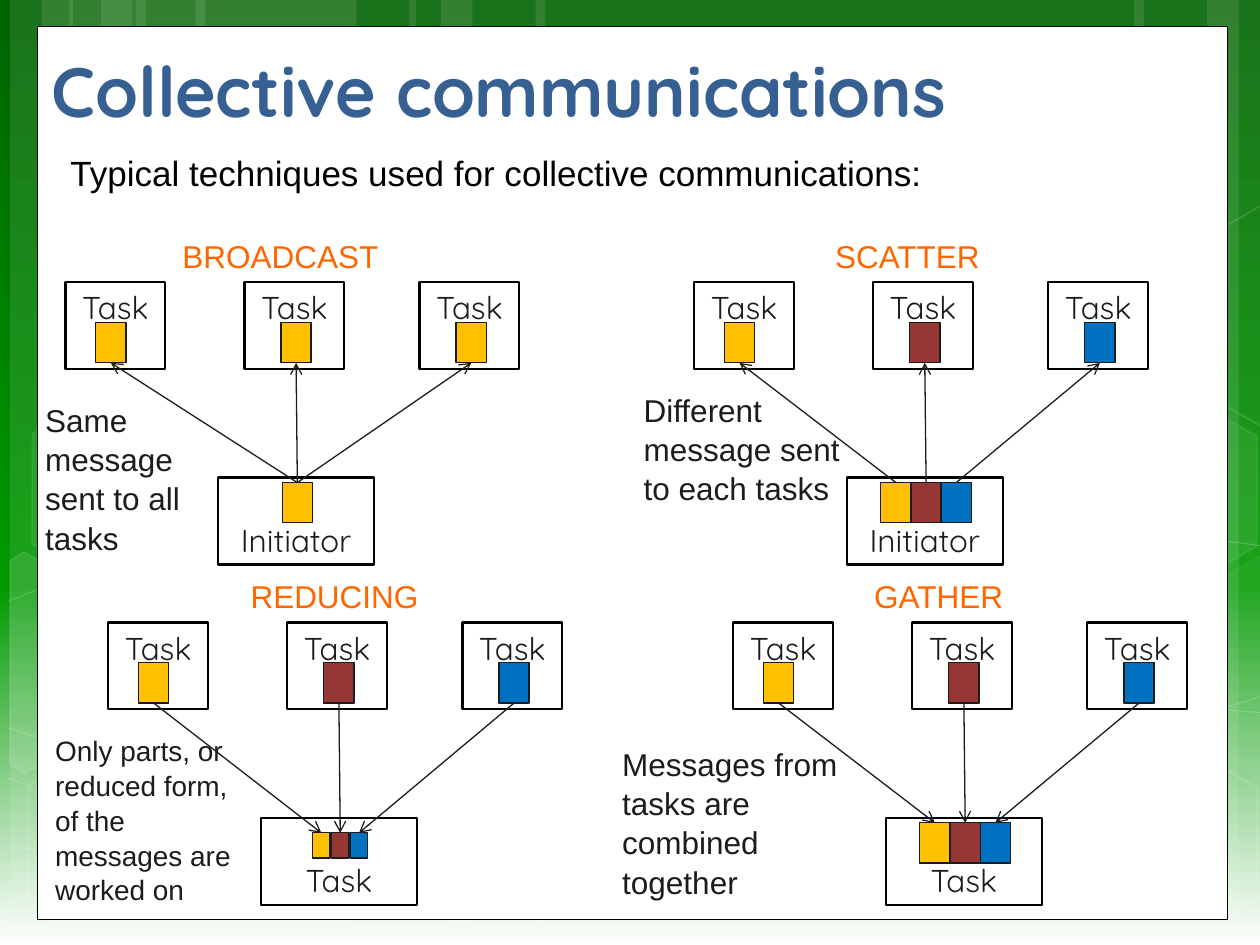
from copy import deepcopy

from lxml.etree import SubElement
from pptx import Presentation
from pptx.dml.color import RGBColor
from pptx.enum.shapes import MSO_CONNECTOR, MSO_SHAPE
from pptx.enum.text import MSO_ANCHOR, PP_ALIGN
from pptx.oxml.ns import qn
from pptx.util import Inches, Pt

INK, BLACK, WHITE = "1C1C1C", "000000", "FFFFFF"
YELLOW, RED, BLUE = "FFC000", "953735", "0070C0"

# Offsets inside one diagram, from the corner of its first task
TASK_LEFTS = (0, 1.42, 2.81)
MESSAGE_LEFTS = (0.24, 1.71, 3.10)
MESSAGE_TOP, MESSAGE_SIZE = 0.32, (0.24, 0.32)
HUB_LEFT, HUB_TOP, HUB_CENTER = 1.21, 1.55, 1.84
FULL_PARCEL = (1.59, 0.24, 0.32, 0.24)  # top, width, height, step
SMALL_PARCEL = (1.67, 0.14, 0.20, 0.15)

# left, width, turn
BANDS = [(1.08, 1.75, 0), (0.08, 0.5, 0), (0.33, 0.83, 0), (1.55, 1.75, 0),
         (0.55, 0.5, 0), (0.8, 0.83, 0), (7.33, 1.75, 180), (9.58, 0.5, 180),
         (9, 0.83, 180), (4.25, 3.08, 0), (3.25, 0.5, 0), (3.5, 0.83, 0)]
WAVES = [
    [(0.07, 6.73), (1.9, 6.78), (4.58, 6.65), (7.92, 6.17), (10.07, 5.51)],
    [(0.07, 4.77), (1.21, 4.31), (3.47, 3.87), (6.54, 3.87), (10.07, 4.34)],
    [(0.06, 6.17), (1.7, 6.88), (3.34, 7.49)],
    [(0.07, 5.78), (1.28, 6.16), (3.57, 6.73), (6.28, 7.18), (8.53, 7.36), (10.07, 7.34)],
    [(2.42, 7.49), (3.02, 6.91), (3.88, 6.39), (4.7, 6.09), (6.08, 5.78),
     (6.8, 5.69), (7.94, 5.62), (9.53, 5.62), (10.06, 5.66)],
]
# left, top, fill opacity, line opacity
HEXAGONS = [(4.97, 5.89, 6, 12), (0.11, 5.91, 0, 12), (0.14, 3.12, 7, 8),
            (1.74, 5.92, 0, 12), (8.34, 5.93, 0, 12), (8.34, 3.14, 7, 8)]
# points, fill opacity
CUT_HEXAGONS = [
    ([(0.08, 4.45), (0.19, 4.38), (0.96, 4.82), (0.95, 5.7), (0.2, 6.14), (0.08, 6.07)], 10),
    ([(9.26, 4.85), (10.01, 4.41), (10.09, 4.46), (10.09, 6.13), (10.02, 6.17), (9.26, 5.73)], 4),
    ([(9.26, 2.07), (10.01, 1.63), (10.1, 1.68), (10.09, 3.35), (10.02, 3.39), (9.26, 2.95)], 0),
]

DIAGRAMS = [
    dict(origin=(0.52, 2.24), heading="BROADCAST", heading_box=(1.35, 1.77),
         note="Same message sent to all tasks", note_box=(0.26, 3.12, 1.46, 1.31),
         hub="Initiator", colors=(YELLOW,) * 3, parcels=(YELLOW,), outward=True),
    dict(origin=(5.51, 2.24), heading="SCATTER", heading_box=(6.53, 1.36),
         note="Different message sent to each tasks", note_box=(5.01, 3.04, 2, 1.01),
         hub="Initiator", outward=True),
    dict(origin=(5.82, 4.94), heading="GATHER", heading_box=(6.84, 1.23),
         note="Messages from tasks are combined together", note_box=(4.84, 5.85, 2, 1.31)),
    dict(origin=(0.86, 4.94), heading="REDUCING", heading_box=(1.89, 1.55),
         note="Only parts, or reduced form, of the messages are worked on",
         note_box=(0.34, 5.76, 1.73, 1.45), note_size=16, parcel=SMALL_PARCEL),
]


def rgb(color):
    return RGBColor.from_string(color)


def set_opacity(fill_format, percent):
    for color in fill_format._xPr.iter(qn("a:srgbClr")):
        SubElement(color, qn("a:alpha"), val=str(percent * 1000))


def paint(shape, fill=None, line=None, width=0.75, fill_opacity=100, line_opacity=100):
    shape.shadow.inherit = False
    for part, color, opacity in ((shape.line.fill, line, line_opacity),
                                 (shape.fill, fill, fill_opacity)):
        if color is None or opacity == 0:
            part.background()
            continue
        part.solid()
        part.fore_color.rgb = rgb(color)
        if opacity < 100:
            set_opacity(part, opacity)
    if line:
        shape.line.width = Pt(width)


def write(shape, text, size, font, color, bold=False, align=PP_ALIGN.LEFT,
          anchor=MSO_ANCHOR.TOP, wrap=True, spacing=None):
    frame = shape.text_frame
    frame.word_wrap = wrap
    frame.vertical_anchor = anchor
    paragraph = frame.paragraphs[0]
    paragraph.alignment = align
    paragraph.line_spacing = spacing
    run = paragraph.add_run()
    run.text = text
    for name, value in dict(size=Pt(size), name=font, bold=bold).items():
        setattr(run.font, name, value)
    run.font.color.rgb = rgb(color)


def add_text(slide, box, text, size, font, color, **style):
    write(slide.shapes.add_textbox(*map(Inches, box)), text, size, font, color, **style)


def add_preset(slide, box, kind=MSO_SHAPE.RECTANGLE, **colors):
    shape = slide.shapes.add_shape(kind, *map(Inches, box))
    paint(shape, **colors)
    return shape


def add_outline(slide, points, closed, **colors):
    places = [(Inches(x), Inches(y)) for x, y in points]
    builder = slide.shapes.build_freeform(*places[0])
    builder.add_line_segments(places[1:], close=closed)
    paint(builder.convert_to_shape(), **colors)


def add_box(slide, box, label, anchor=MSO_ANCHOR.TOP):
    shape = add_preset(slide, box, fill=WHITE, line=BLACK, width=1.25)
    write(shape, label, 18, "Quicksand", INK, align=PP_ALIGN.CENTER, anchor=anchor)


def add_arrow(slide, start, end):
    arrow = slide.shapes.add_connector(MSO_CONNECTOR.STRAIGHT, *map(Inches, start + end))
    arrow.line.color.rgb = rgb(INK)
    arrow.line.width = Pt(0.75)
    SubElement(arrow.line._get_or_add_ln(), qn("a:tailEnd"), type="arrow")
    SubElement(arrow._element.spPr, qn("a:effectLst"))


def add_background(slide):
    fill = slide.background.fill
    fill.gradient()
    fill.gradient_angle = 270
    stop_list = fill.gradient_stops[0]._gs.getparent()
    stop_list.append(deepcopy(stop_list[-1]))
    stops = ((0, "006400"), (0.62, "009900"), (1, WHITE))
    for stop, (position, color) in zip(fill.gradient_stops, stops):
        stop.position = position
        stop.color.rgb = rgb(color)


def add_decoration(slide):
    for left, width, turn in BANDS:
        band = add_preset(slide, (left, 0, width, 7.5), fill=WHITE, fill_opacity=10)
        band.rotation = turn
    for points in WAVES:
        add_outline(slide, points, False, line=WHITE, width=0.5, line_opacity=20)
    for left, top, fill_opacity, line_opacity in HEXAGONS:
        hexagon = add_preset(slide, (left, top, 1.75, 1.52), MSO_SHAPE.HEXAGON, fill=WHITE,
                             line=WHITE, width=1, fill_opacity=fill_opacity,
                             line_opacity=line_opacity)
        hexagon.adjustments[0] = 0.285
        hexagon.rotation = 30
    for points, opacity in CUT_HEXAGONS:
        add_outline(slide, points, True, fill=WHITE, line=WHITE, width=1,
                    fill_opacity=opacity, line_opacity=12)
    add_preset(slide, (0.3, 0.21, 9.44, 7.09), fill=WHITE, line=BLACK, width=0.5)


def add_diagram(slide, origin, heading, heading_box, note, note_box, hub="Task",
                colors=(YELLOW, RED, BLUE), parcels=(YELLOW, RED, BLUE),
                parcel=FULL_PARCEL, note_size=18, outward=False):
    left, top = origin
    parcel_top, width, height, step = parcel
    # Hub and tasks
    add_box(slide, (left + HUB_LEFT, top + HUB_TOP, 1.24, 0.69), hub, MSO_ANCHOR.BOTTOM)
    for offset in TASK_LEFTS:
        add_box(slide, (left + offset, top, 0.79, 0.69), "Task")
    # Messages in the tasks and parcels in the hub
    for offset, color in zip(MESSAGE_LEFTS, colors):
        add_preset(slide, (left + offset, top + MESSAGE_TOP, *MESSAGE_SIZE), fill=color, line=INK)
    centers = [left + HUB_CENTER + (index - (len(parcels) - 1) / 2) * step
               for index in range(len(parcels))]
    for center, color in zip(centers, parcels):
        add_preset(slide, (center - width / 2, top + parcel_top, width, height),
                   fill=color, line=INK)
    # Arrows between each message and its parcel
    for index, offset in enumerate(MESSAGE_LEFTS):
        hub_end = (centers[index % len(centers)], top + parcel_top)
        task_end = (left + offset + MESSAGE_SIZE[0] / 2, top + MESSAGE_TOP + MESSAGE_SIZE[1])
        ends = (hub_end, task_end) if outward else (task_end, hub_end)
        add_arrow(slide, *ends)
    # Heading and note
    heading_left, heading_width = heading_box
    add_text(slide, (heading_left, top - 0.41, heading_width, 0.4), heading, 18, "Arial",
             "FF6600", wrap=False)
    add_text(slide, note_box, note, note_size, "Arial", INK, spacing=1.04)


def main():
    presentation = Presentation()
    presentation.slide_width, presentation.slide_height = Inches(10), Inches(7.5)
    slide = presentation.slides.add_slide(presentation.slide_layouts[6])
    add_background(slide)
    add_decoration(slide)
    add_text(slide, (0.31, 0.32, 9.69, 0.77), "Collective communications", 40, "Quicksand",
             "376092", bold=True, anchor=MSO_ANCHOR.BOTTOM)
    add_text(slide, (0.46, 1.15, 7.01, 0.44),
             "Typical techniques used for collective communications:", 20, "Arial", BLACK,
             wrap=False)
    for diagram in DIAGRAMS:
        add_diagram(slide, **diagram)
    presentation.save("out.pptx")


if __name__ == "__main__":
    main()
